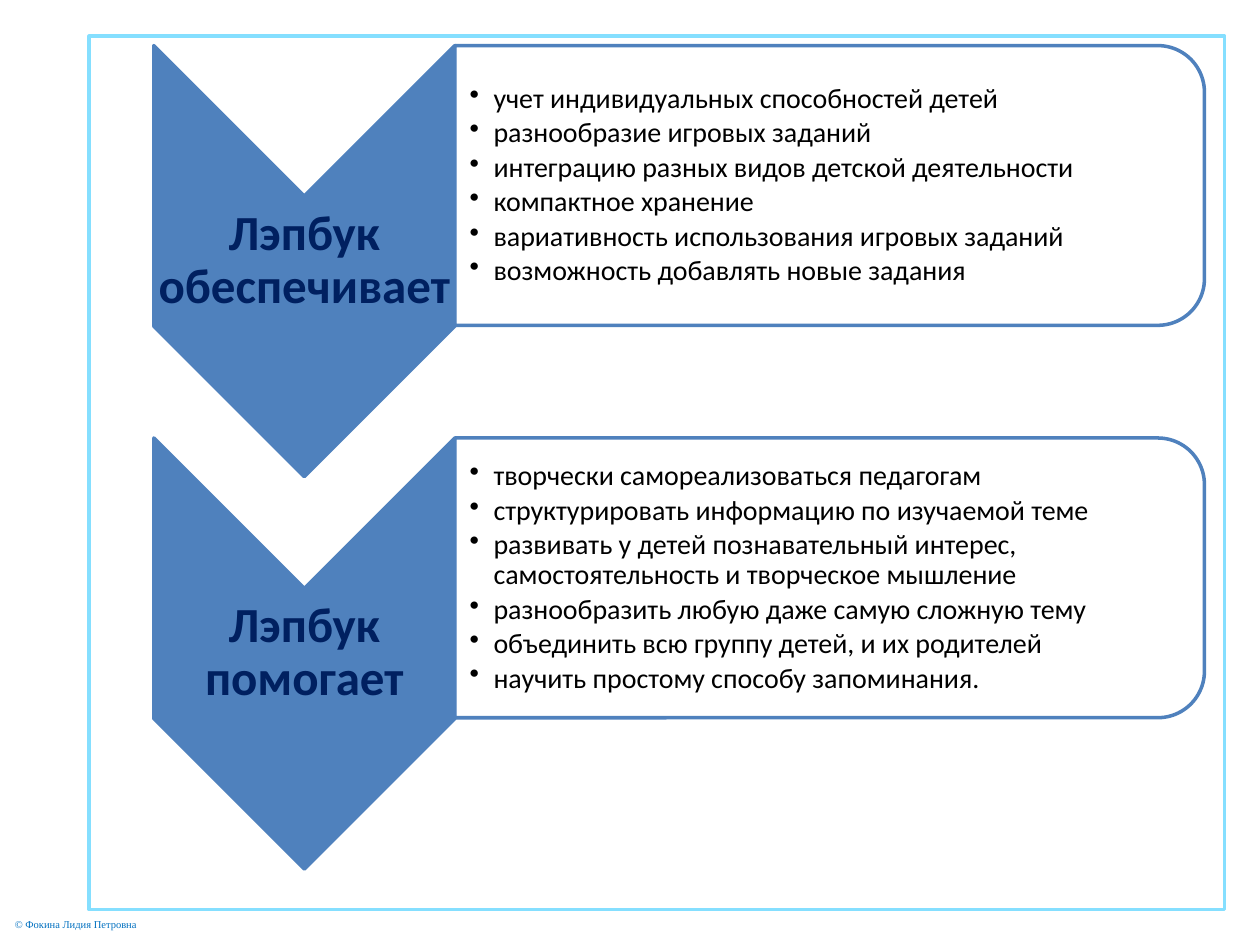
from lxml import etree
from pptx import Presentation
from pptx.dml.color import RGBColor
from pptx.enum import shapes, text
from pptx.oxml import ns
from pptx.util import Cm, Pt

WHITE = RGBColor(0xFF, 0xFF, 0xFF)
BLACK = RGBColor(0, 0, 0)
SKY = RGBColor(0x85, 0xDF, 0xFF)
BLUE = RGBColor(0x4F, 0x81, 0xBD)
NAVY = RGBColor(0x00, 0x20, 0x60)
CREDIT_BLUE = RGBColor(0x00, 0x70, 0xC0)

SECTIONS = [
    ("Лэпбук обеспечивает", [
        "учет индивидуальных способностей детей",
        "разнообразие игровых заданий",
        "интеграцию разных видов детской деятельности",
        "компактное хранение",
        "вариативность использования игровых заданий",
        "возможность добавлять новые задания",
    ]),
    ("Лэпбук помогает", [
        "творчески самореализоваться педагогам",
        "структурировать информацию по изучаемой теме",
        "развивать у детей познавательный интерес, "
        "самостоятельность и творческое мышление",
        "разнообразить любую даже самую сложную тему",
        "объединить всю группу детей, и их родителей",
        "научить простому способу запоминания.",
    ]),
]


def add_outline(slide, preset, box, fill, line, opacity=100, rotation=0):
    left, top, width, height = box
    if rotation:
        left, top = left + (width - height) / 2, top + (height - width) / 2
        width, height = height, width
    outline = slide.shapes.add_shape(preset, Cm(left), Cm(top), Cm(width), Cm(height))
    outline.rotation = rotation
    outline.shadow.inherit = False
    outline.fill.solid()
    outline.fill.fore_color.rgb = fill
    outline.line.color.rgb = line
    outline.line.width = Pt(2)
    if opacity < 100:
        color = outline._element.spPr.find(ns.qn("a:solidFill"))[0]
        etree.SubElement(color, ns.qn("a:alpha"), val=str(opacity * 1000))
    return outline


def add_text(slide, box, lines, size, color, font="Calibri", bold=False,
             align=text.PP_ALIGN.LEFT, insets=(0.05, 0.05, 0.05, 0.05),
             wrap=True, spacing=1, after=0, bullet_indent=0):
    frame = slide.shapes.add_textbox(*(Cm(length) for length in box)).text_frame
    frame.word_wrap = wrap
    frame.vertical_anchor = text.MSO_ANCHOR.MIDDLE
    (frame.margin_left, frame.margin_top,
     frame.margin_right, frame.margin_bottom) = (Cm(inset) for inset in insets)
    for index, line in enumerate(lines):
        paragraph = frame.add_paragraph() if index else frame.paragraphs[0]
        paragraph.alignment = align
        paragraph.line_spacing = spacing
        paragraph.space_after = Pt(after)
        if bullet_indent:
            paragraph.level = 1
            properties = paragraph._p.get_or_add_pPr()
            properties.set("marL", str(Cm(bullet_indent)))
            properties.set("indent", str(-Cm(bullet_indent)))
            etree.SubElement(properties, ns.qn("a:buChar"), char="•")
        run = paragraph.add_run()
        run.text = line
        run.font.name = font
        run.font.size = Pt(size)
        run.font.bold = bold
        run.font.color.rgb = color


def add_background(slide, box):
    left, top, width, height = box
    add_outline(slide, shapes.MSO_SHAPE.RECTANGLE, box, WHITE, SKY, opacity=70)
    add_text(slide, (left - 1.75, top + height + 0.04, 3.05, 0.5),
             ["© Фокина Лидия Петровна"], 6, CREDIT_BLUE,
             font="Times New Roman", insets=(0.25, 0.13, 0.25, 0.13), wrap=False)


def add_heading_chevron(slide, box, heading):
    left, top, width, height = box
    add_outline(slide, shapes.MSO_SHAPE.CHEVRON, box, BLUE, BLUE, rotation=90)
    add_text(slide, (left, top + width / 2, width, height - width), [heading],
             28, NAVY, bold=True, align=text.PP_ALIGN.CENTER, spacing=0.9)


def add_points_panel(slide, box, points):
    left, top, width, height = box
    add_outline(slide, shapes.MSO_SHAPE.ROUND_2_SAME_RECTANGLE, box,
                WHITE, BLUE, opacity=90, rotation=90)
    add_text(slide, (left, top + 0.27, width - 0.28, height - 0.54), points,
             16, BLACK, insets=(0.3, 0.03, 0.03, 0.03), spacing=0.9,
             after=2.4, bullet_indent=0.48)


def add_section(slide, box, heading, points):
    left, top, width, height = box
    chevron_width = 6.07
    add_heading_chevron(slide, (left, top, chevron_width, height), heading)
    add_points_panel(slide, (left + chevron_width, top, width - chevron_width, 5.64),
                     points)


def main():
    deck = Presentation()
    deck.slide_width, deck.slide_height = Cm(25.4), Cm(19.05)
    slide = deck.slides.add_slide(deck.slide_layouts[6])
    add_background(slide, (1.8, 0.73, 22.89, 17.61))
    for row, (heading, points) in enumerate(SECTIONS):
        add_section(slide, (3.1, 0.92 + row * 7.91, 21.18, 8.69), heading, points)
    deck.save("out.pptx")


if __name__ == "__main__":
    main()
